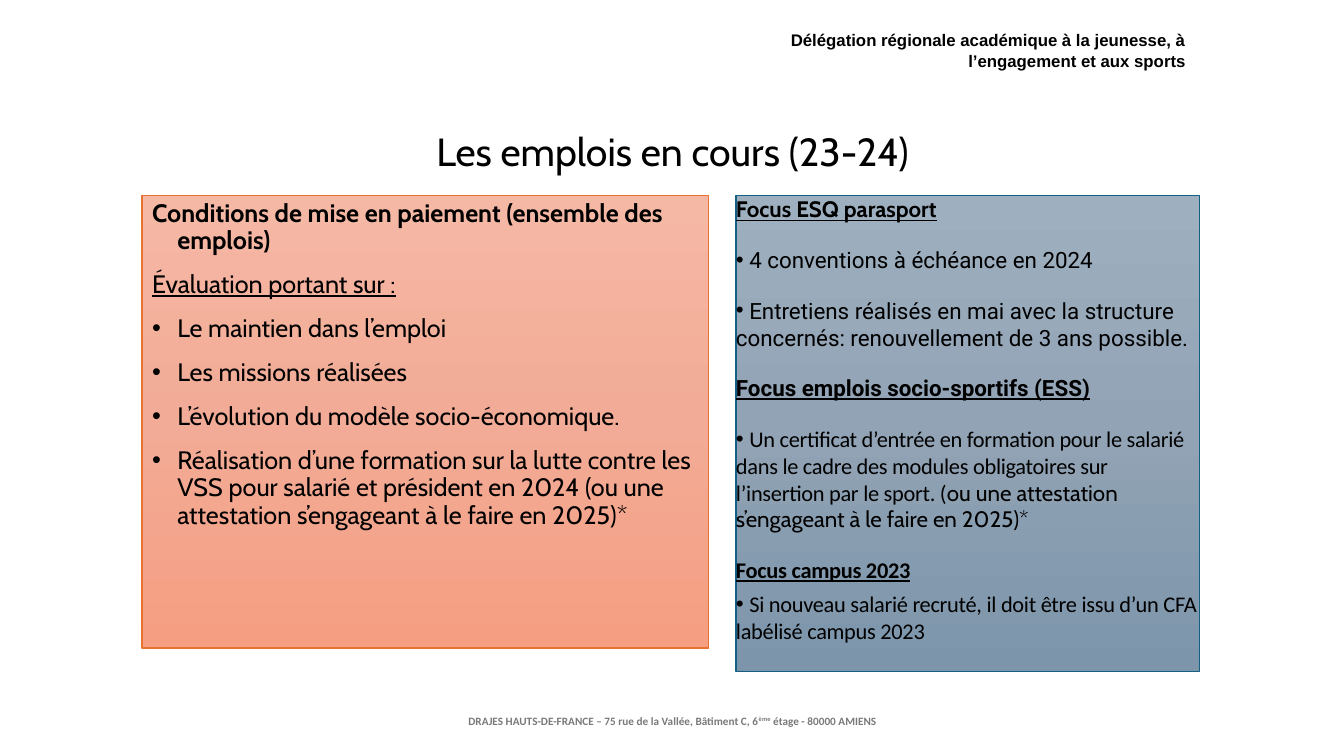
import copy

import pptx
import pptx.dml.color
import pptx.enum.shapes
import pptx.enum.text
import pptx.oxml.ns
import pptx.util
from pptx.util import Inches, Pt

RGBColor = pptx.dml.color.RGBColor
ALIGN = pptx.enum.text.PP_ALIGN
ANCHOR = pptx.enum.text.MSO_ANCHOR

BLACK = RGBColor(0x00, 0x00, 0x00)
GREY = RGBColor(0x79, 0x79, 0x79)
ORANGE = RGBColor(0xE9, 0x71, 0x32)
BLUE = RGBColor(0x15, 0x60, 0x82)
SALMON_STOPS = [RGBColor(0xF5, 0xB8, 0xA5), RGBColor(0xF2, 0xAB, 0x96), RGBColor(0xF5, 0x9E, 0x82)]
SLATE_STOPS = [RGBColor(0x9E, 0xAF, 0xBF), RGBColor(0x91, 0xA3, 0xB4), RGBColor(0x7C, 0x95, 0xAB)]

CABIN = {"name": "Cabin"}
ROBOTO = {"name": "Roboto"}
CALIBRI = {"name": "Calibri"}
HEADING = {"bold": True, "underline": True}
TIGHT = {"spc": "-20"}


def set_attributes(target, values):
    for name, value in values.items():
        setattr(target, name, value)


def add_run(paragraph, text, size, font, color=BLACK, xml=None):
    run = paragraph.add_run()
    run.text = text
    set_attributes(run.font, {"size": Pt(size), **font})
    run.font.color.rgb = color
    for name, value in (xml or {}).items():
        run.font._element.set(name, value)


def add_paragraph(frame, layout):
    """Use the empty first paragraph, then append new ones."""
    first = frame.paragraphs[0]
    paragraph = frame.add_paragraph() if first.runs else first
    set_attributes(paragraph, layout)
    return paragraph


def add_bullet(paragraph):
    properties = paragraph._p.get_or_add_pPr()
    for tag, name, value in (("a:buFont", "typeface", "Arial"), ("a:buChar", "char", "•")):
        properties.append(pptx.oxml.parse_xml(
            f'<{tag} {pptx.oxml.ns.nsdecls("a")} {name}="{value}"/>'))


def add_text_box(slide, box, anchor=ANCHOR.TOP):
    frame = slide.shapes.add_textbox(*map(Inches, box)).text_frame
    set_attributes(frame, {"word_wrap": True, "vertical_anchor": anchor})
    return frame


def add_panel(slide, box, colors, border):
    """Rectangle with a three-stop gradient running downwards."""
    panel = slide.shapes.add_shape(pptx.enum.shapes.MSO_SHAPE.RECTANGLE, *map(Inches, box))
    panel.shadow.inherit = False
    panel.fill.gradient()
    panel.fill.gradient_angle = 270
    first_stop = panel.fill.gradient_stops[0]._gs
    first_stop.addnext(copy.deepcopy(first_stop))
    for stop, color, position in zip(panel.fill.gradient_stops, colors, (0, 0.5, 1)):
        stop.color.rgb = color
        stop.position = position
    panel.line.color.rgb = border
    panel.line.width = Pt(1)
    set_attributes(panel.text_frame, {"word_wrap": True, "vertical_anchor": ANCHOR.TOP})
    return panel.text_frame


def build_title(slide, box):
    title = slide.shapes.title
    set_attributes(title, dict(zip(("left", "top", "width", "height"), map(Inches, box))))
    set_attributes(title.text_frame, {
        "word_wrap": True,
        "vertical_anchor": ANCHOR.MIDDLE,
        "auto_size": pptx.enum.text.MSO_AUTO_SIZE.NONE,
    })
    line = add_paragraph(title.text_frame, {"alignment": ALIGN.CENTER, "line_spacing": 0.9})
    add_run(line, "Les emplois en cours (23-24)", 28, CABIN)


def build_footer(slide, box):
    address = add_paragraph(add_text_box(slide, box, ANCHOR.MIDDLE), {"alignment": ALIGN.CENTER})
    parts = [
        ("DRAJES HAUTS-DE-FRANCE – 75 rue de la Vallée, Bâtiment C, 6", {}),
        ("ème", {"baseline": "30000"}),
        (" étage - 80000 AMIENS", {}),
    ]
    for text, xml in parts:
        add_run(address, text, 8, {**CALIBRI, "bold": True}, GREY, xml)


def build_header(slide, box):
    office = add_paragraph(add_text_box(slide, box), {"alignment": ALIGN.RIGHT})
    add_run(office, "Délégation régionale académique à la jeunesse, à l’engagement et aux sports",
            12, {"name": "Arial", "bold": True})


def build_conditions(slide, box):
    frame = add_panel(slide, box, SALMON_STOPS, ORANGE)
    # Text, font style, bulleted
    conditions = [
        ("Conditions de mise en paiement (ensemble des emplois)", {"bold": True}, False),
        ("Évaluation portant sur :", {"underline": True}, False),
        ("Le maintien dans l’emploi", {}, True),
        ("Les missions réalisées", {}, True),
        ("L’évolution du modèle socio-économique.", {}, True),
        ("Réalisation d’une formation sur la lutte contre les VSS pour salarié et président "
         "en 2024 (ou une attestation s’engageant à le faire en 2025)*", {}, True),
    ]
    layout = {"alignment": ALIGN.LEFT, "line_spacing": 0.9, "space_before": Pt(12)}
    for text, style, bulleted in conditions:
        condition = add_paragraph(frame, layout)
        properties = condition._p.get_or_add_pPr()
        properties.set("marL", str(Inches(0.25)))
        properties.set("indent", str(Inches(-0.25)))
        if bulleted:
            add_bullet(condition)
        add_run(condition, text, 18, {**CABIN, **style})


def build_focus(slide, box):
    frame = add_panel(slide, box, SLATE_STOPS, BLUE)
    set_attributes(frame, dict.fromkeys(
        ("margin_left", "margin_top", "margin_right", "margin_bottom"), 0))
    spaced = {"alignment": ALIGN.LEFT, "space_before": Pt(12), "space_after": Pt(5)}
    compact = {"alignment": ALIGN.LEFT}
    # Layout, bulleted, runs of (text, font, extra character attributes)
    points = [
        (spaced, False, [("Focus ESQ parasport", {**CABIN, **HEADING}, {})]),
        (spaced, True, [(" 4 conventions à échéance en 2024", ROBOTO, {})]),
        (spaced, True, [(" Entretiens réalisés en mai avec la structure concernés: "
                         "renouvellement de 3 ans possible.", ROBOTO, {})]),
        (spaced, False, [("Focus emplois socio-sportifs (ESS)", {**ROBOTO, **HEADING}, {})]),
        (spaced, True, [
            (" ", ROBOTO, {}),
            ("Un certificat d’entrée en formation pour le salarié dans le cadre des modules "
             "obligatoires sur l’insertion par le sport. (", CALIBRI, TIGHT),
            ("ou une attestation s’engageant à le faire en 2025)*", CABIN, {}),
        ]),
        (spaced, False, [("Focus campus 2023", {**CALIBRI, **HEADING}, TIGHT)]),
        (compact, True, [
            (" ", ROBOTO, {}),
            ("Si nouveau salarié recruté, il doit être issu d’un CFA labélisé campus 2023",
             CALIBRI, TIGHT),
        ]),
    ]
    for layout, bulleted, runs in points:
        point = add_paragraph(frame, layout)
        if bulleted:
            add_bullet(point)
        for text, font, xml in runs:
            add_run(point, text, 16, font, xml=xml)


def main():
    deck = pptx.Presentation()
    deck.slide_width, deck.slide_height = Inches(13.33), Inches(7.5)
    slide = deck.slides.add_slide(deck.slide_layouts.get_by_name("Title Only"))
    build_title(slide, (1.68, 1, 9.98, 1.05))
    build_footer(slide, (4.42, 6.95, 4.5, 0.4))
    build_conditions(slide, (1.41, 1.94, 5.62, 4.49))
    build_focus(slide, (7.3, 1.94, 4.6, 4.72))
    build_header(slide, (6.9, 0.25, 4.96, 0.5))
    deck.save("out.pptx")


if __name__ == "__main__":
    main()
